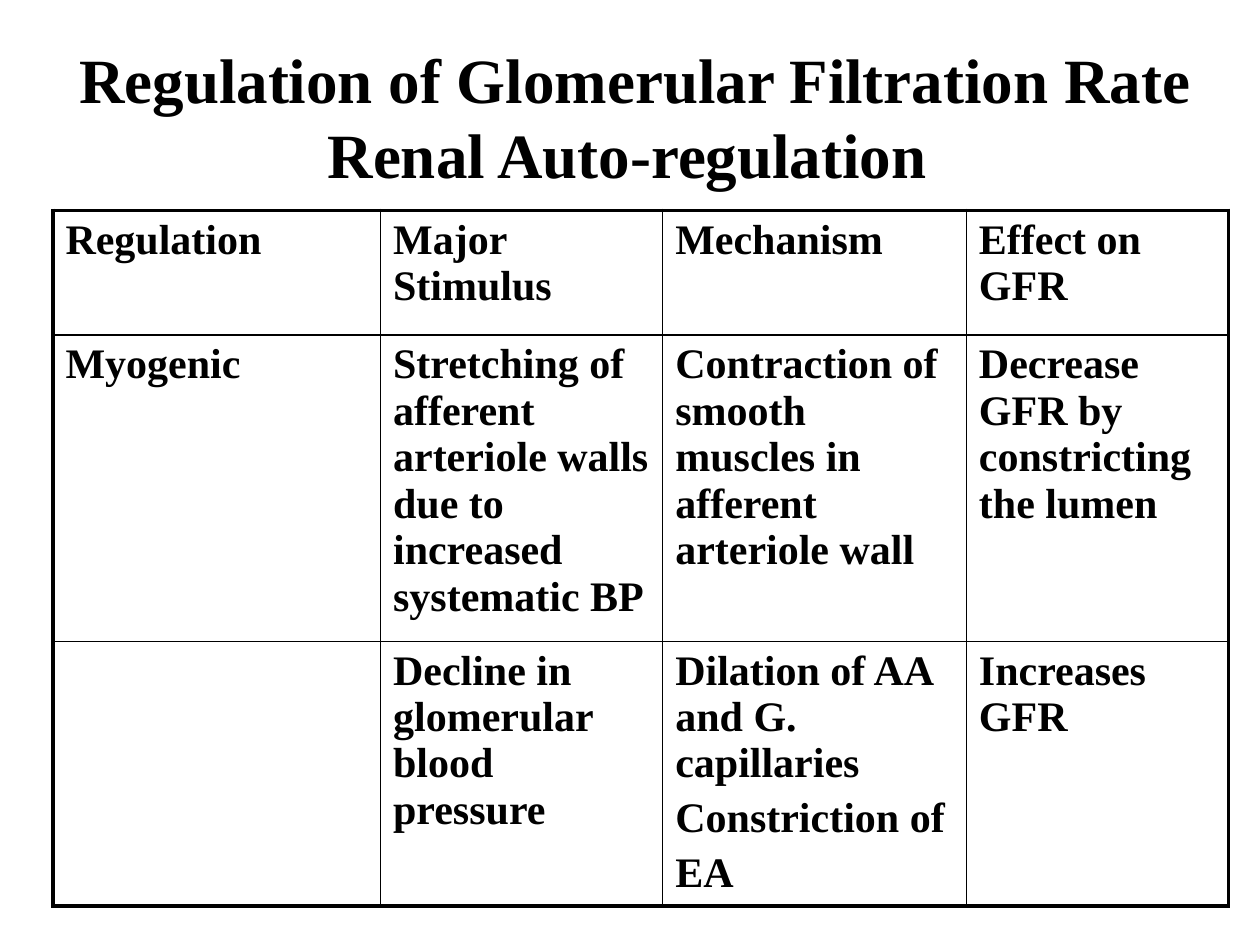
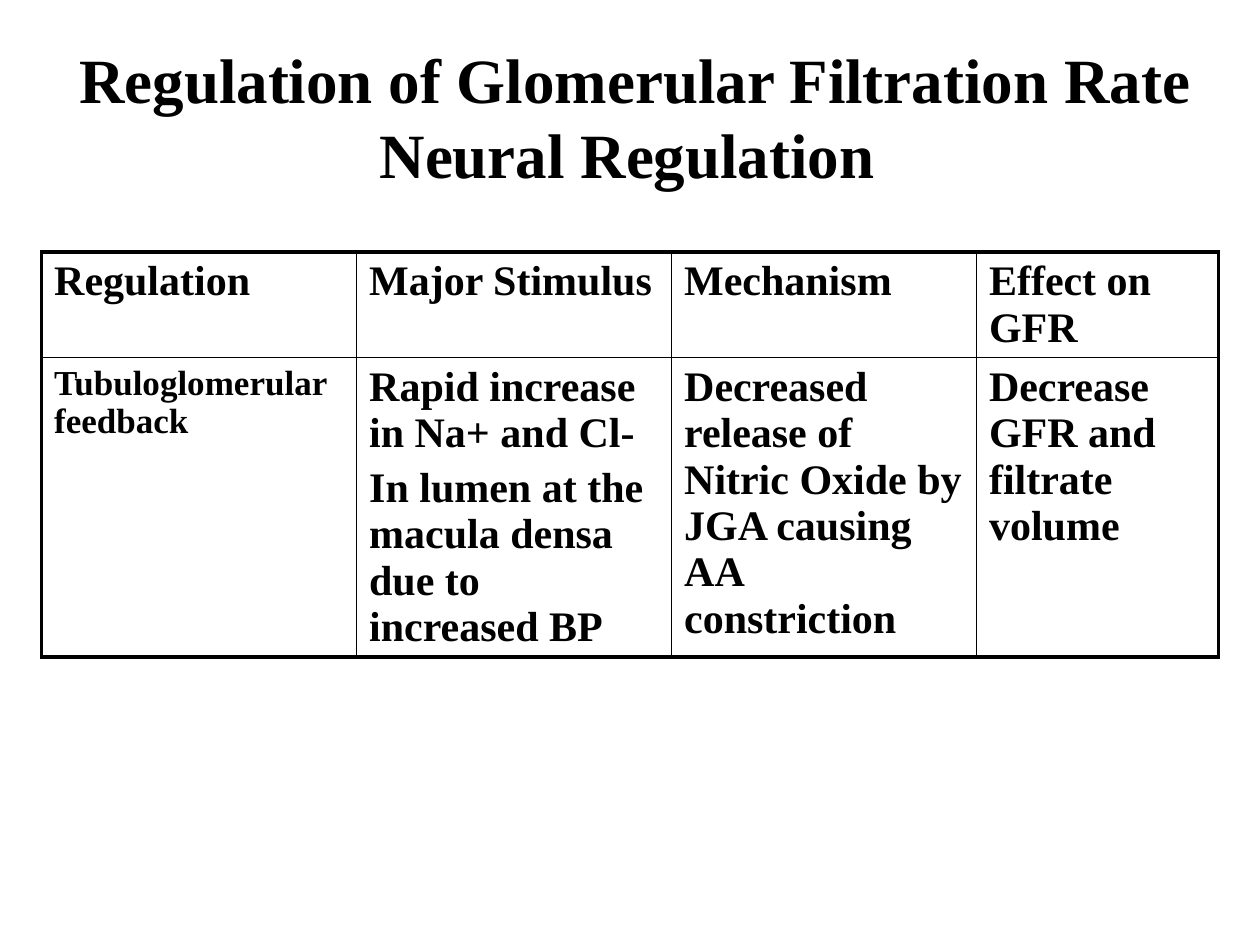
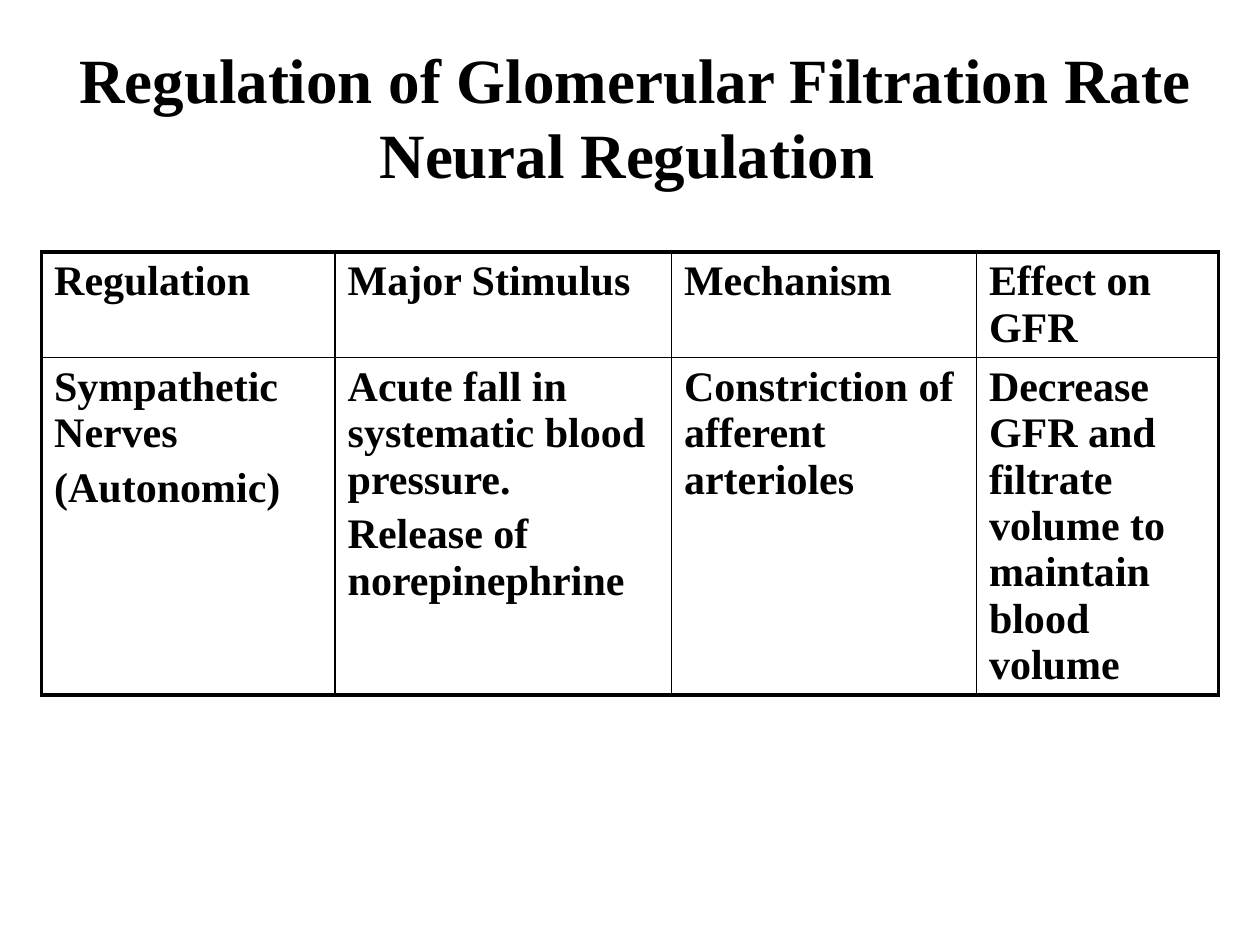
from lxml.etree import SubElement
from pptx import Presentation
from pptx.dml.color import RGBColor
from pptx.enum.text import MSO_ANCHOR, MSO_AUTO_SIZE, PP_ALIGN
from pptx.oxml.ns import qn
from pptx.util import Inches, Pt

BLACK = RGBColor(0, 0, 0)
FONT = "Times New Roman"
TITLE_SIZE = 36
TABLE_SIZE = 24
OUTER_LINE = Pt(2.25)
INNER_LINE = Pt(1)
TOPIC = "Regulation of Glomerular Filtration Rate"
HEADINGS = ["Regulation", "Major Stimulus", "Mechanism", "Effect on GFR"]
SMALL_TEXT = {"Tubuloglomerular feedback": 20}

SLIDES = [
    {
        "subtitle": "Renal Auto-regulation ",
        "place": (0.42, 1.67),
        "columns": [2.6, 2.24, 2.41, 2.08],
        "heights": [0.99, 2.43, 2.1],
        "rows": [
            ["Myogenic",
             "Stretching of afferent arteriole walls due to increased systematic BP",
             "Contraction of smooth muscles in afferent arteriole wall",
             "Decrease GFR by constricting the lumen"],
            ["",
             "Decline in glomerular blood pressure",
             "Dilation of AA and G. capillaries\nConstriction of\nEA",
             "Increases GFR"],
        ],
    },
    {
        "subtitle": "Neural Regulation ",
        "place": (0.33, 2),
        "columns": [2.5, 2.5, 2.42, 1.92],
        "heights": [0.76, 2.35],
        "rows": [
            ["Tubuloglomerular feedback",
             "Rapid increase in Na+ and Cl-\n"
             "In lumen at the macula densa due to increased BP",
             "Decreased release of Nitric Oxide by JGA causing AA constriction",
             "Decrease GFR and filtrate volume"],
        ],
    },
    {
        "subtitle": "Neural Regulation ",
        "place": (0.33, 2),
        "columns": [2.33, 2.67, 2.42, 1.92],
        "heights": [0.76, 2.35],
        "rows": [
            ["Sympathetic Nerves\n(Autonomic)",
             "Acute fall in systematic blood pressure.\nRelease of norepinephrine",
             "Constriction of afferent arterioles",
             "Decrease GFR and filtrate volume to maintain blood volume"],
        ],
    },
]


def format_runs(para, size):
    for span in para.runs:
        span.font.name = FONT
        span.font.size = Pt(size)
        span.font.bold = True
        span.font.color.rgb = BLACK


def add_borders(cell, outer_sides):
    properties = cell._tc.get_or_add_tcPr()
    for side in "LRTB":
        width = OUTER_LINE if side in outer_sides else INNER_LINE
        line = SubElement(properties, qn(f"a:ln{side}"), w=str(width))
        fill = SubElement(line, qn("a:solidFill"))
        SubElement(fill, qn("a:srgbClr"), val=str(BLACK))


deck = Presentation()
deck.slide_width = Inches(10)
deck.slide_height = Inches(7.5)

for content in SLIDES:
    page = deck.slides.add_slide(deck.slide_layouts[5])

    title = page.shapes.title
    title.left, title.top = Inches(0.33), Inches(0.42)
    title.width, title.height = Inches(9.42), Inches(1)
    title.text_frame.text = f"{TOPIC}\v{content['subtitle']}"
    title.text_frame.auto_size = MSO_AUTO_SIZE.NONE
    title.text_frame.vertical_anchor = MSO_ANCHOR.MIDDLE
    heading = title.text_frame.paragraphs[0]
    heading.alignment = PP_ALIGN.CENTER
    format_runs(heading, TITLE_SIZE)

    rows = [HEADINGS] + content["rows"]
    left, top = content["place"]
    columns, heights = content["columns"], content["heights"]
    table = page.shapes.add_table(
        len(rows), len(columns), Inches(left), Inches(top),
        Inches(sum(columns)), Inches(sum(heights))).table
    table.first_row = False
    table.horz_banding = False
    for column, width in zip(table.columns, columns):
        column.width = Inches(width)
    for row, height in zip(table.rows, heights):
        row.height = Inches(height)

    for row_index, texts in enumerate(rows):
        for column_index, text in enumerate(texts):
            cell = table.cell(row_index, column_index)
            cell.text_frame.text = text
            for para in cell.text_frame.paragraphs:
                para.space_before = Pt(0.2 * TABLE_SIZE)
                format_runs(para, SMALL_TEXT.get(text, TABLE_SIZE))
            outer_sides = {
                "L": column_index == 0,
                "R": column_index == len(columns) - 1,
                "T": row_index == 0,
                "B": row_index == len(rows) - 1,
            }
            add_borders(cell, [side for side, edge in outer_sides.items() if edge])
            cell.fill.background()

deck.save("out.pptx")
